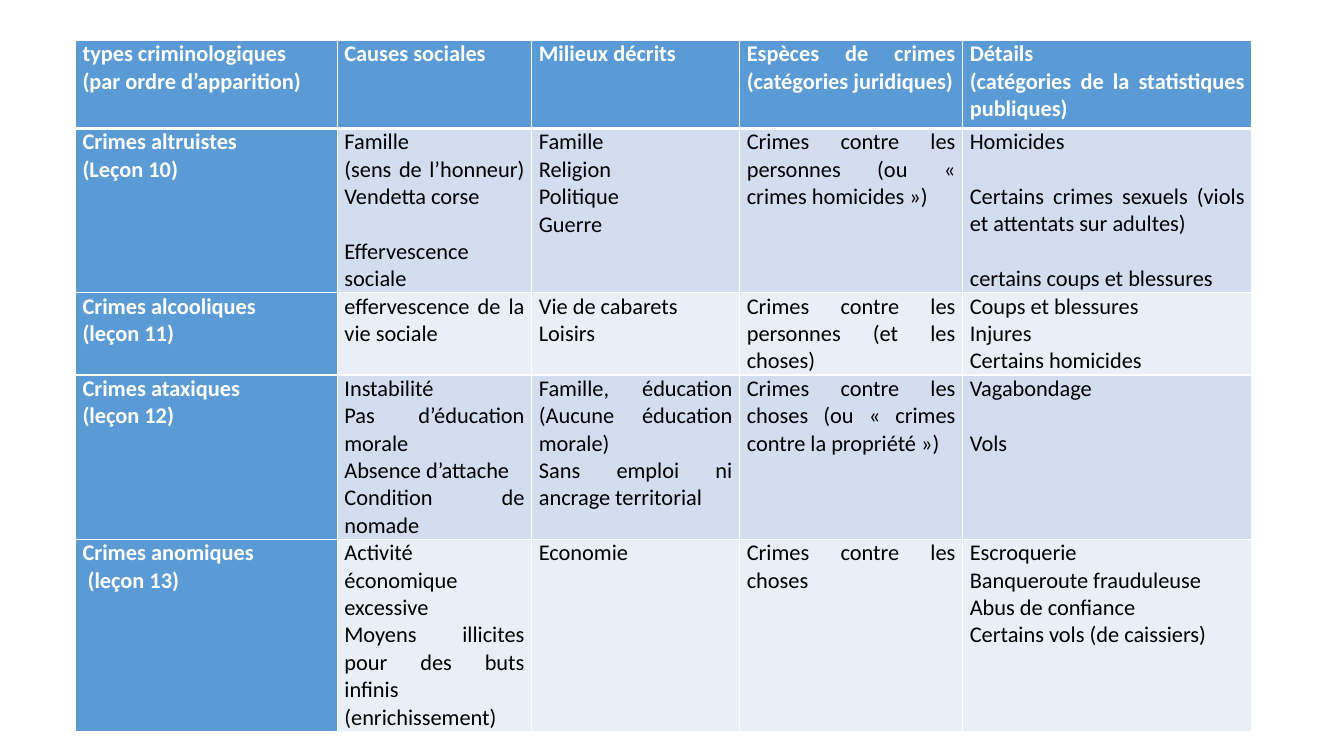
from dataclasses import dataclass

from lxml.etree import SubElement
from pptx import Presentation
from pptx.dml.color import RGBColor
from pptx.enum.text import MSO_ANCHOR, PP_ALIGN
from pptx.oxml.ns import qn
from pptx.util import Cm, Pt


@dataclass(frozen=True)
class Theme:
    font: str = "Calibri"
    size: float = 16
    gap: float = 19.5
    head: str = "5B9BD5"
    bands: tuple = ("D2DEEF", "EAEFF7")
    light: str = "FFFFFF"
    dark: str = "000000"
    thin: float = 1
    thick: float = 3


# Table content: "|" starts a paragraph, "||" starts one after a gap
ROWS = [
    ["types criminologiques|(par ordre d’apparition)",
     "Causes sociales",
     "Milieux décrits",
     "Espèces de crimes (catégories juridiques)",
     "Détails|(catégories de la statistiques publiques)"],
    ["Crimes altruistes|(Leçon 10)",
     "Famille|(sens de l’honneur) Vendetta corse||Effervescence sociale",
     "Famille|Religion|Politique|Guerre",
     "Crimes contre les personnes (ou « crimes homicides »)",
     "Homicides||Certains crimes sexuels (viols et attentats sur adultes)"
     "||certains coups et blessures"],
    ["Crimes alcooliques|(leçon 11)",
     "effervescence de la vie sociale",
     "Vie de cabarets|Loisirs",
     "Crimes contre les personnes (et les choses)",
     "Coups et blessures|Injures|Certains homicides"],
    ["Crimes ataxiques|(leçon 12)",
     "Instabilité|Pas d’éducation morale|Absence d’attache"
     "|Condition de nomade",
     "Famille, éducation (Aucune éducation morale)"
     "|Sans emploi ni ancrage territorial",
     "Crimes contre les choses (ou « crimes contre la propriété »)",
     "Vagabondage||Vols"],
    ["Crimes anomiques| (leçon 13)",
     "Activité économique excessive"
     "|Moyens illicites pour des buts infinis (enrichissement)",
     "Economie",
     "Crimes contre les choses",
     "Escroquerie|Banqueroute frauduleuse|Abus de confiance"
     "|Certains vols (de caissiers)"],
]
WIDTHS = [6.6, 4.9, 5.24, 5.62, 7.29]
HEIGHTS = [2.22, 4.14, 2.07, 4.14, 4.8]


class Deck:
    def __init__(self, theme):
        self.theme = theme
        self.file = Presentation()
        self.file.slide_width = Cm(33.87)
        self.file.slide_height = Cm(19.05)
        self.slide = self.file.slides.add_slide(self.file.slide_layouts[6])

    def table(self, left, top, rows, widths, heights):
        frame = self.slide.shapes.add_table(
            len(rows), len(widths), Cm(left), Cm(top),
            Cm(sum(widths)), Cm(sum(heights)))
        grid = frame.table
        grid.first_col = True
        for col, width in zip(grid.columns, widths):
            col.width = Cm(width)
        for row, height in zip(grid.rows, heights):
            row.height = Cm(height)
        for y, row in enumerate(rows):
            for x, text in enumerate(row):
                self.cell(grid.cell(y, x), text, y, x)

    def cell(self, cell, text, y, x):
        look = self.theme
        title = y == 0 or x == 0
        cell.margin_left = cell.margin_right = Cm(0.18)
        cell.margin_top = cell.margin_bottom = 0
        cell.vertical_anchor = MSO_ANCHOR.TOP

        # Borders: the rule below the header row is thicker
        self.border(cell, "L", look.thin)
        self.border(cell, "R", look.thin)
        self.border(cell, "T", look.thick if y == 1 else look.thin)
        self.border(cell, "B", look.thick if y == 0 else look.thin)

        # Fill: header colour, or alternating bands
        cell.fill.solid()
        shade = look.head if title else look.bands[(y - 1) % 2]
        cell.fill.fore_color.rgb = RGBColor.from_string(shade)

        # Text
        frame = cell.text_frame
        for i, block in enumerate(text.split("||")):
            for j, line in enumerate(block.split("|")):
                first = i == 0 and j == 0
                para = frame.paragraphs[0] if first else frame.add_paragraph()
                para.text = line
                para.alignment = PP_ALIGN.LEFT if x == 0 else PP_ALIGN.JUSTIFY
                if i > 0 and j == 0:
                    para.space_before = Pt(look.gap)
                font = para.font
                font.name = look.font
                font.size = Pt(look.size)
                font.bold = title
                tone = look.light if title else look.dark
                font.color.rgb = RGBColor.from_string(tone)

    def border(self, cell, side, width):
        props = cell._tc.get_or_add_tcPr()
        line = SubElement(props, qn(f"a:ln{side}"), w=str(Pt(width)))
        fill = SubElement(line, qn("a:solidFill"))
        SubElement(fill, qn("a:srgbClr"), val=self.theme.light)

    def save(self):
        self.file.save("out.pptx")


def main():
    deck = Deck(Theme())
    deck.table(1.9, 1.02, ROWS, WIDTHS, HEIGHTS)
    deck.save()


if __name__ == "__main__":
    main()
